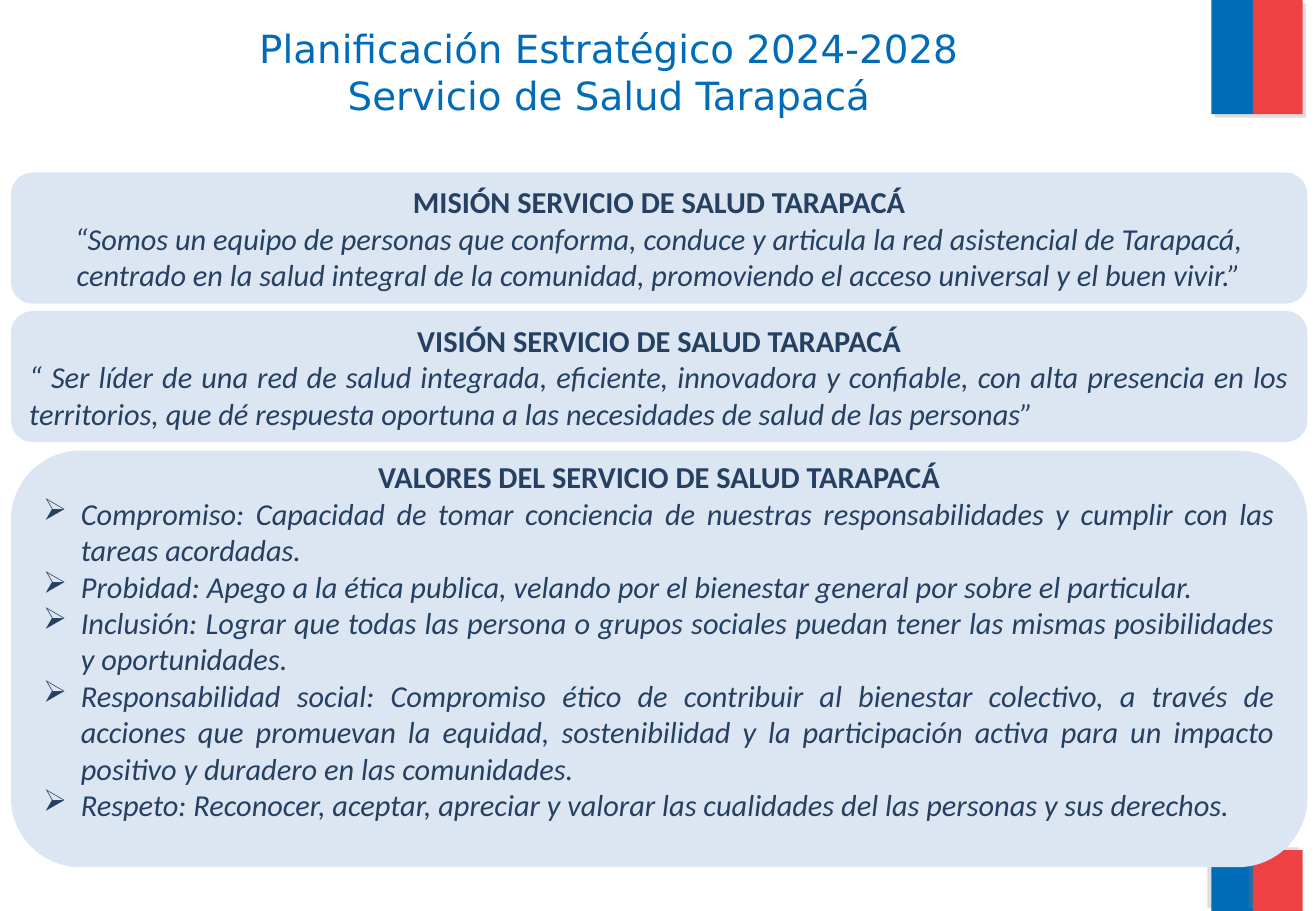
"""Strategic planning slide with the mission, vision and values of a health service."""
from dataclasses import dataclass

from lxml import etree
from pptx import Presentation
from pptx.dml.color import RGBColor
from pptx.enum.shapes import MSO_SHAPE
from pptx.enum.text import MSO_ANCHOR, MSO_AUTO_SIZE, PP_ALIGN
from pptx.oxml.ns import qn
from pptx.slide import Slide
from pptx.util import Inches, Pt

RECT, ROUNDED = MSO_SHAPE.RECTANGLE, MSO_SHAPE.ROUNDED_RECTANGLE
CENTER, JUSTIFY = PP_ALIGN.CENTER, PP_ALIGN.JUSTIFY
MIDDLE, NO_AUTOFIT = MSO_ANCHOR.MIDDLE, MSO_AUTO_SIZE.NONE

BLUE = RGBColor(0x00, 0x6C, 0xB7)
RED = RGBColor(0xEF, 0x41, 0x44)
PALE_BLUE = RGBColor(0xDC, 0xE6, 0xF2)
NAVY = RGBColor(0x25, 0x40, 0x61)

TITLE_FONT = {"name": "DejaVu Sans", "size": Pt(23), "bold": False}
HEADING_FONT = {"name": "Calibri", "size": Pt(18), "bold": True}
BODY_FONT = {"name": "Calibri", "size": Pt(18), "italic": True}
HANGING = Inches(0.31)


@dataclass
class Flag:
    top: float
    height: float
    shadow_angle: int


@dataclass
class Panel:
    top: float
    height: float
    heading: str
    body: list[str]
    align: PP_ALIGN = JUSTIFY
    bullet: str = ""
    bottom_inset: float = 0.05


FLAGS = [Flag(0, 0.94, 45), Flag(7, 0.5, 215)]
FLAG_STRIPES = [(9.97, 0.34, BLUE), (10.31, 0.41, RED)]

PANELS = [
    Panel(1.42, 1.08, "MISIÓN SERVICIO DE SALUD TARAPACÁ", [
        "“Somos un equipo de personas que conforma, conduce y articula la red asistencial de "
        "Tarapacá, centrado en la salud integral de la comunidad, promoviendo el acceso "
        "universal y el buen vivir.”",
    ], align=CENTER),
    Panel(2.56, 1.08, "VISIÓN SERVICIO DE SALUD TARAPACÁ", [
        "“ Ser líder de una red de salud integrada, eficiente, innovadora y confiable, con alta "
        "presencia en los territorios, que dé respuesta oportuna a las necesidades de salud de "
        "las personas”",
    ]),
    Panel(3.71, 3.43, "VALORES DEL SERVICIO DE SALUD TARAPACÁ", [
        "Compromiso: Capacidad de tomar conciencia de nuestras responsabilidades y cumplir con "
        "las tareas acordadas.",
        "Probidad: Apego a la ética publica, velando por el bienestar general por sobre el "
        "particular.",
        "Inclusión: Lograr que todas las persona o grupos sociales puedan tener las mismas "
        "posibilidades y oportunidades.",
        "Responsabilidad social: Compromiso ético de contribuir al bienestar colectivo, a través "
        "de acciones que promuevan la equidad, sostenibilidad y la participación activa para un "
        "impacto positivo y duradero en las comunidades.",
        "Respeto: Reconocer, aceptar, apreciar y valorar las cualidades del las personas y sus "
        "derechos.",
    ], bullet="➢", bottom_inset=0.35),
]


def add_block(s: Slide, kind: MSO_SHAPE, left: float, top: float, width: float,
              height: float, color: RGBColor):
    """Add a filled shape without outline or shadow."""
    sp = s.shapes.add_shape(kind, Inches(left), Inches(top), Inches(width), Inches(height))
    sp.fill.solid()
    sp.fill.fore_color.rgb = color
    sp.line.fill.background()
    sp.shadow.inherit = False
    return sp


def add_flag(s: Slide, flag: Flag) -> None:
    """Draw the two stripes of a flag with their cast shadows."""
    for left, width, color in FLAG_STRIPES:
        sp = add_block(s, RECT, left, flag.top, width, flag.height, color)
        effects = sp._element.spPr.find(qn("a:effectLst"))
        shadow = etree.SubElement(effects, qn("a:outerShdw"), blurRad="0", dist=str(Pt(3)),
                                  dir=str(flag.shadow_angle * 60000), rotWithShape="0")
        tint = etree.SubElement(shadow, qn("a:srgbClr"), val="808080")
        etree.SubElement(tint, qn("a:alpha"), val="25000")


def write(p, text: str, font: dict, color: RGBColor, align: PP_ALIGN) -> None:
    """Fill a paragraph with formatted text."""
    p.text = text
    p.alignment = align
    for r in p.runs:
        for name, value in font.items():
            setattr(r.font, name, value)
        r.font.color.rgb = color


def add_bullet(p, mark: str) -> None:
    """Give a paragraph a hanging bullet."""
    pPr = p._p.get_or_add_pPr()
    pPr.set("marL", str(HANGING))
    pPr.set("indent", str(-HANGING))
    etree.SubElement(pPr, qn("a:buChar"), char=mark)


def add_panel(s: Slide, panel: Panel) -> None:
    """Draw a rounded panel with its heading and body."""
    sp = add_block(s, ROUNDED, 0.09, panel.top, 10.67, panel.height, PALE_BLUE)
    tf = sp.text_frame
    tf.word_wrap = True
    tf.vertical_anchor = MIDDLE
    tf.margin_bottom = Inches(panel.bottom_inset)
    write(tf.paragraphs[0], panel.heading, HEADING_FONT, NAVY, CENTER)
    for text in panel.body:
        p = tf.add_paragraph()
        write(p, text, BODY_FONT, NAVY, panel.align)
        if panel.bullet:
            add_bullet(p, panel.bullet)


def add_title(s: Slide) -> None:
    """Place and format the slide title."""
    sp = s.shapes.title
    sp.left, sp.top, sp.width, sp.height = map(Inches, (0.18, 0.16, 9.67, 0.86))
    tf = sp.text_frame
    tf.auto_size = NO_AUTOFIT
    tf.vertical_anchor = MIDDLE
    write(tf.paragraphs[0], "Planificación Estratégico 2024-2028\vServicio de Salud Tarapacá",
          TITLE_FONT, BLUE, CENTER)


def main() -> None:
    """Build and save the slide."""
    prs = Presentation()
    prs.slide_width, prs.slide_height = Inches(10.83), Inches(7.5)
    s = prs.slides.add_slide(prs.slide_layouts[5])
    add_title(s)
    for flag in FLAGS:
        add_flag(s, flag)
    for panel in PANELS:
        add_panel(s, panel)
    prs.save("out.pptx")


if __name__ == "__main__":
    main()
